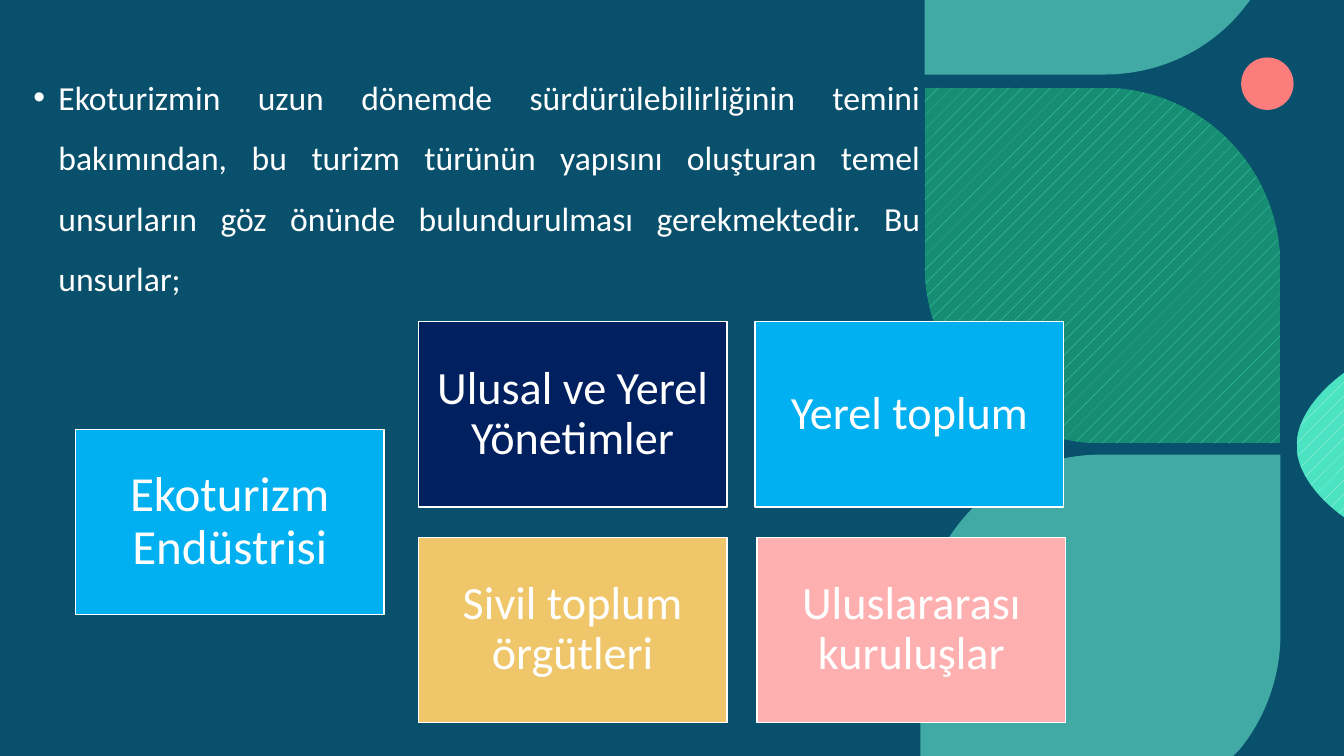
from lxml import etree
from pptx import Presentation
from pptx import util as u
from pptx.dml.color import RGBColor
from pptx.enum import dml, shapes, text
from pptx.oxml import ns

NAVY = RGBColor(0x00, 0x20, 0x60)
GREEN = RGBColor(0x18, 0x99, 0x7E)
DARK_GREEN = RGBColor(0x17, 0x8E, 0x74)
MINT = RGBColor(0x69, 0xE7, 0xCC)
BRIGHT_MINT = RGBColor(0x4B, 0xE3, 0xC2)
PALE_MINT = RGBColor(0xC3, 0xF6, 0xEB)
CORAL = RGBColor(0xFD, 0x7C, 0x7C)
PINK = RGBColor(0xFE, 0xB0, 0xB0)
SAND = RGBColor(0xEF, 0xC7, 0x6A)
SKY = RGBColor(0x00, 0xB0, 0xF0)
WHITE = RGBColor(0xFF, 0xFF, 0xFF)

WIDTH, HEIGHT = 13.33, 7.5
TILE_W, TILE_H = 3.06, 1.84


def paint(shape, color, opacity=100):
    shape.shadow.inherit = False
    shape.line.fill.background()
    shape.fill.solid()
    shape.fill.fore_color.rgb = color
    if opacity < 100:
        tint = next(shape.element.iter(ns.qn("a:srgbClr")))
        etree.SubElement(tint, ns.qn("a:alpha"), val=str(opacity * 1000))


def paint_hatched(shape, fore, back):
    shape.shadow.inherit = False
    shape.line.fill.background()
    shape.fill.patterned()
    shape.fill.pattern = dml.MSO_PATTERN.PERCENT_5
    shape.fill.fore_color.rgb = fore
    shape.fill.back_color.rgb = back


def add_box(page, kind, box):
    return page.shapes.add_shape(kind, *(u.Inches(v) for v in box))


def add_outline(page, corner, *segments):
    """Draw segments relative to the corner: two numbers make a line, six a Bezier curve."""
    left, top = corner
    points = [(u.Inches(left + segment[i]), u.Inches(top + segment[i + 1]))
              for segment in segments for i in range(0, len(segment), 2)]
    builder = page.shapes.build_freeform(*points[0])
    builder.add_line_segments(points[1:], close=True)
    outline = builder.convert_to_shape()
    lines = iter(list(outline.element.iter(ns.qn("a:lnTo"))))
    for segment in segments[1:]:
        first = next(lines)
        if len(segment) == 6:
            first.tag = ns.qn("a:cubicBezTo")
            for _ in range(2):
                line = next(lines)
                first.append(line[0])
                line.getparent().remove(line)
    return outline


def add_backdrop(page):
    page.background.fill.solid()
    page.background.fill.fore_color.rgb = NAVY
    tint = add_box(page, shapes.MSO_SHAPE.RECTANGLE, (0, 0, WIDTH, HEIGHT))
    paint(tint, GREEN, 40)


def add_leaves(page, left):
    """Draw the column of leaf shapes, the dot and the clipped petal."""
    paint(add_box(page, shapes.MSO_SHAPE.OVAL, (left + 3.14, 0.57, 0.52, 0.52)), CORAL)
    top_leaf = add_outline(page, (left, 0), (0, 0), (3.23, 0), (3.16, 0.09),
                           (2.84, 0.49, 2.34, 0.74, 1.78, 0.74), (0, 0.74))
    bottom_leaf = add_outline(page, (left - 0.04, 4.51), (1.79, 0), (3.57, 0), (3.57, 1.78),
                              (3.57, 2.21, 3.42, 2.61, 3.17, 2.92), (3.1, 2.99),
                              (0, 2.99), (0, 1.79), (0, 0.8, 0.8, 0, 1.79, 0))
    for leaf in (top_leaf, bottom_leaf):
        paint(leaf, MINT, 60)
    petal = add_outline(page, (left + 3.69, 3.7), (0.47, 0), (0.47, 1.43),
                        (0.47, 1.43, 0, 1.12, 0, 0.72), (0, 0.32, 0.47, 0, 0.47, 0))
    paint_hatched(petal, PALE_MINT, BRIGHT_MINT)
    middle_leaf = add_outline(page, (left, 0.87), (3.53, 3.53), (1.77, 3.53),
                              (0.79, 3.53, 0, 2.74, 0, 1.76), (0, 0), (1.77, 0),
                              (2.74, 0, 3.53, 0.79, 3.53, 1.77))
    paint_hatched(middle_leaf, BRIGHT_MINT, DARK_GREEN)


def add_span(para, words, size):
    span = para.add_run()
    span.text = words
    span.font.name = "Calibri"
    span.font.size = u.Pt(size)
    span.font.color.rgb = WHITE


def place_body(page, box, words):
    body = page.placeholders[1]
    body.left, body.top, body.width, body.height = (u.Inches(v) for v in box)
    body.element.getparent().append(body.element)  # in front of the backdrop
    frame = body.text_frame
    frame.word_wrap = True
    frame.auto_size = text.MSO_AUTO_SIZE.NONE
    frame.vertical_anchor = text.MSO_ANCHOR.TOP
    para = frame.paragraphs[0]
    para.alignment = text.PP_ALIGN.JUSTIFY
    para.line_spacing = 1.5
    para.space_before = u.Pt(0)
    props = para._p.get_or_add_pPr()
    props.set("marL", str(u.Inches(0.25)))
    props.set("indent", str(-u.Inches(0.25)))
    etree.SubElement(props, ns.qn("a:buFont"), typeface="Arial")
    etree.SubElement(props, ns.qn("a:buChar"), char="•")
    add_span(para, words, 24)


def add_tile(page, left, top, words, color, size=33, inset=0.14):
    tile = add_box(page, shapes.MSO_SHAPE.RECTANGLE, (left, top, TILE_W, TILE_H))
    paint(tile, color)
    tile.line.color.rgb = WHITE
    tile.line.width = u.Pt(1)
    frame = tile.text_frame
    frame.word_wrap = True
    frame.vertical_anchor = text.MSO_ANCHOR.MIDDLE
    frame.margin_left = frame.margin_right = u.Inches(inset)
    frame.margin_top = frame.margin_bottom = u.Inches(inset)
    para = frame.paragraphs[0]
    para.alignment = text.PP_ALIGN.CENTER
    para.line_spacing = 0.9
    add_span(para, words, size)


def add_elements_slide(deck):
    page = deck.slides.add_slide(deck.slide_layouts[1])
    title = page.shapes.title.element
    title.getparent().remove(title)
    add_backdrop(page)
    add_leaves(page, 9.17)
    place_body(page, (0.23, 0.51, 9, 4.96),
               "Ekoturizmin uzun dönemde sürdürülebilirliğinin temini bakımından, "
               "bu turizm türünün yapısını oluşturan temel unsurların göz önünde "
               "bulundurulması gerekmektedir. Bu unsurlar;")
    upper, lower = 3.19, 5.33
    add_tile(page, 4.15, upper, "Ulusal ve Yerel Yönetimler", NAVY)
    add_tile(page, 7.49, upper, "Yerel toplum", SKY)
    add_tile(page, 4.15, lower, "Sivil toplum örgütleri", SAND)
    add_tile(page, 7.51, lower, "Uluslararası kuruluşlar", PINK)
    add_tile(page, 0.75, (upper + lower) / 2, "Ekoturizm Endüstrisi", SKY, 35, 0.15)


def main():
    deck = Presentation()
    deck.slide_width, deck.slide_height = u.Inches(WIDTH), u.Inches(HEIGHT)
    add_elements_slide(deck)
    deck.save("out.pptx")


if __name__ == "__main__":
    main()
